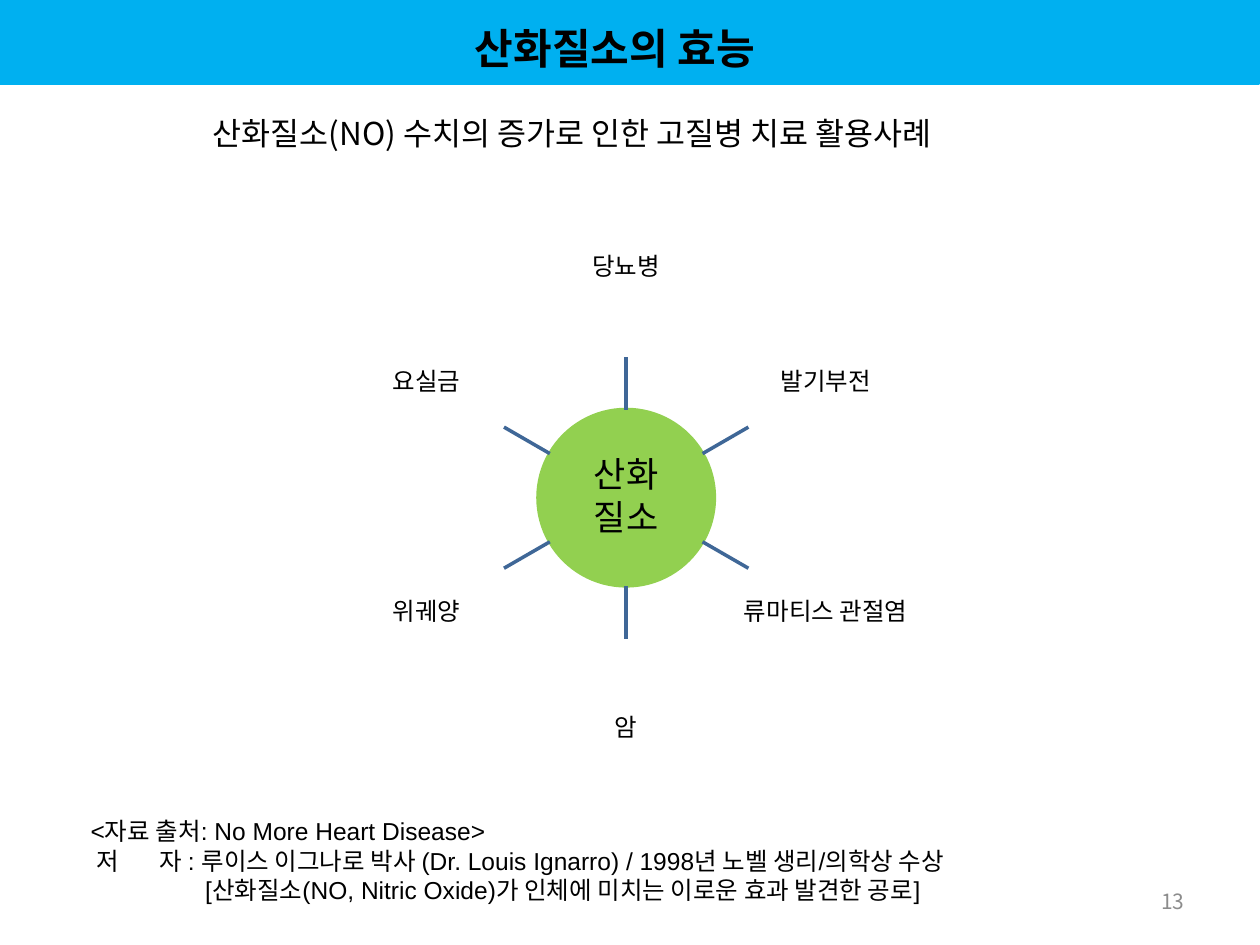
from math import cos, radians, sin

from lxml.etree import SubElement
from pptx import Presentation
from pptx.dml.color import RGBColor
from pptx.enum.shapes import MSO_CONNECTOR as Connector, MSO_SHAPE as Shape
from pptx.enum.text import MSO_ANCHOR as Anchor, PP_ALIGN as Align
from pptx.oxml.ns import qn
from pptx.util import Inches, Pt

KOREAN, LATIN = "Noto Sans CJK KR", "Arial"
TITLE = "산화질소의 효능"
SUBTITLE = "산화질소(NO) 수치의 증가로 인한 고질병 치료 활용사례"
HUB = ["산화", "질소"]
DISEASES = ["당뇨병", "발기부전", "류마티스 관절염", "암", "위궤양", "요실금"]
SOURCE = [
    ("<자료 출처: No More Heart Disease>", 0),
    ("저\t자 : 루이스 이그나로 박사 (Dr. Louis Ignarro) / 1998년 노벨 생리/의학상 수상", 0.05),
    ("[산화질소(NO, Nitric Oxide)가 인체에 미치는 이로운 효과 발견한 공로]", 0.91),
]
PAGE_NUMBER = "13"

CENTER_X, CENTER_Y = 4.97, 3.95
DIAMETER = 1.4
ORBIT = 1.83
SPOKE_START, SPOKE_END = 0.7, 1.12
SOFT_EDGE = Pt(50)


def color(value):
    return RGBColor.from_string(value)


def add_filled(page, kind, place, fill, line):
    shape = page.shapes.add_shape(kind, *map(Inches, place))
    shape.shadow.inherit = False
    shape.fill.solid()
    shape.fill.fore_color.rgb = color(fill)
    shape.line.color.rgb = color(line)
    shape.line.width = Pt(2)
    return shape


def write(shape, lines, size, font=KOREAN, ink="000000", align=Align.LEFT, bold=False):
    frame = shape.text_frame
    frame.text = "\n".join(lines)
    for para in frame.paragraphs:
        para.alignment = align
        for span in para.runs:
            span.font.size = Pt(size)
            span.font.name = font
            span.font.bold = bold
            span.font.color.rgb = color(ink)
            for tag in ("a:ea", "a:cs"):
                SubElement(span.font._element, qn(tag), typeface=KOREAN)
    return frame


def add_text(page, place, lines, size, anchor=Anchor.TOP, wrap=True, **style):
    box = page.shapes.add_textbox(*map(Inches, place))
    frame = write(box, lines, size, **style)
    frame.word_wrap = wrap
    frame.vertical_anchor = anchor
    return frame


def add_circle(page, x, y, lines, size, fill, line, soft=False):
    place = (x - DIAMETER / 2, y - DIAMETER / 2, DIAMETER, DIAMETER)
    circle = add_filled(page, Shape.OVAL, place, fill, line)
    if soft:
        effects = circle._element.spPr.find(qn("a:effectLst"))
        SubElement(effects, qn("a:softEdge"), rad=str(SOFT_EDGE))
    frame = add_text(page, place, lines, size, Anchor.MIDDLE, align=Align.CENTER)
    frame.margin_left = frame.margin_right = Inches(0.01)
    frame.margin_top = frame.margin_bottom = Inches(0.01)
    for para in frame.paragraphs:
        para.line_spacing = 0.9
        para.space_after = Pt(3)


def polar(angle, distance):
    return CENTER_X + distance * cos(angle), CENTER_Y + distance * sin(angle)


def add_spoke(page, angle):
    ends = polar(angle, SPOKE_START) + polar(angle, SPOKE_END)
    spoke = page.shapes.add_connector(Connector.STRAIGHT, *map(Inches, ends))
    spoke.line.color.rgb = color("3F6797")
    spoke.line.width = Pt(2)
    SubElement(spoke._element.spPr, qn("a:effectLst"))


def add_header(page):
    add_filled(page, Shape.RECTANGLE, (-0.01, 0, 10, 0.66), "00B0F0", "00B0F0")
    title = page.shapes.add_shape(
        Shape.ROUNDED_RECTANGLE, *map(Inches, (1.95, 0.1, 5.86, 0.55)))
    title.shadow.inherit = False
    title.fill.background()
    title.line.fill.background()
    frame = write(title, [TITLE], 24, align=Align.CENTER, bold=True)
    frame.vertical_anchor = Anchor.MIDDLE
    add_text(page, (1.59, 0.86, 6.58, 0.4), [SUBTITLE], 18, wrap=False)


def add_wheel(page):
    add_circle(page, CENTER_X, CENTER_Y, HUB, 20, "92D050", "92D050")
    for index, disease in enumerate(DISEASES):
        angle = radians(-90 + index * 360 / len(DISEASES))
        add_spoke(page, angle)
        add_circle(page, *polar(angle, ORBIT), [disease], 14, "93CDDD", "FFFFFF", soft=True)


def add_footer(page):
    frame = add_text(page, (0.62, 6.43, 8.75, 0.81),
                     [text for text, _ in SOURCE], 14, font=LATIN)
    for para, (_, indent) in zip(frame.paragraphs, SOURCE):
        properties = para._p.get_or_add_pPr()
        properties.set("marL", str(Inches(indent)))
        properties.set("indent", "0")
        if "\t" in para.text:
            tabs = SubElement(properties, qn("a:tabLst"))
            SubElement(tabs, qn("a:tab"), pos=str(Inches(0.6)), algn="l")
    add_text(page, (7.17, 6.95, 2.33, 0.4), [PAGE_NUMBER], 12, Anchor.MIDDLE,
             ink="8C8C8C", align=Align.RIGHT)


def main():
    deck = Presentation()
    deck.slide_width, deck.slide_height = Inches(10), Inches(7.5)
    page = deck.slides.add_slide(deck.slide_layouts[6])
    add_header(page)
    add_wheel(page)
    add_footer(page)
    deck.save("out.pptx")


if __name__ == "__main__":
    main()
